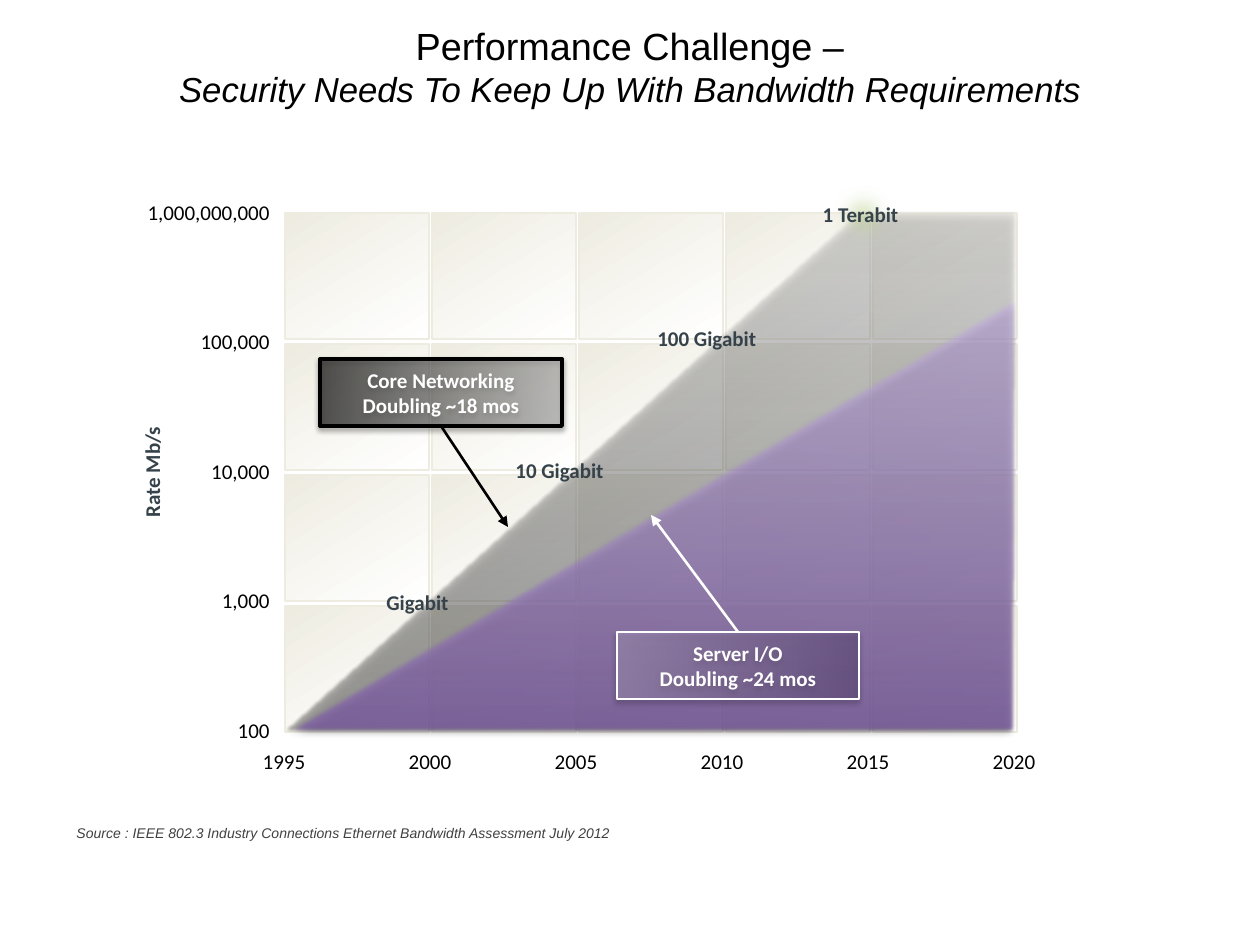
from lxml.etree import SubElement
from pptx import Presentation
from pptx.dml.color import RGBColor
from pptx.enum.shapes import MSO_CONNECTOR as Connector, MSO_SHAPE as Shape
from pptx.enum.text import MSO_ANCHOR as Anchor, PP_ALIGN as Align
from pptx.oxml.ns import qn
from pptx.util import Emu, Pt

SCALE = 914400 / 126
INK = "36424A"

TITLE = "Performance Challenge –\vSecurity Needs To Keep Up With Bandwidth Requirements"
TITLE_SIZES = (21.6, 19.8)
SOURCE = "Source : IEEE 802.3 Industry Connections Ethernet Bandwidth Assessment July 2012"
RATES = ["1,000,000,000", "100,000", "10,000", "1,000", "100"]
YEARS = ["1995", "2000", "2005", "2010", "2015", "2020"]
MILESTONES = [  # text, left, top, width
    ("100 Gigabit", 645, 319, 175),
    ("10 Gigabit", 503, 451, 158),
    ("Gigabit", 374, 583, 134),
]
# Gradient stops are (colour, opacity %)
AREAS = [
    ([(281, 732), (857, 212), (1016, 212), (1013, 733)], [("000000", 34), ("BDBDBD", 37)]),
    ([(281, 733), (1016, 297), (1014, 733)], [("7F5BAB", 70), ("C8B0ED", 51)]),
]
CALLOUTS = [  # text, left, top, stops, line colour, line width, arrow from, arrow to
    ("Server I/O\vDoubling ~24 mos", 617, 632, [("B3A2C7", 46), ("604A7B", 46)],
     "FFFFFF", 0.75, (738, 632), (651, 515)),
    ("Core Networking\vDoubling ~18 mos", 320, 359, [("000000", 60), ("999999", 46)],
     "000000", 2.25, (441, 426), (508, 527)),
]


def px(value):
    return Emu(round(value * SCALE))


def rgb(color):
    return RGBColor.from_string(color)


def format_text(frame, align, size, color, bold=False, italic=False, font="Calibri"):
    for para in frame.paragraphs:
        para.alignment = align
        for span in para.runs:
            span.font.name, span.font.size = font, Pt(size)
            span.font.bold, span.font.italic = bold, italic
            span.font.color.rgb = rgb(color)


def add_text(page, text, box, align=Align.LEFT, size=12, color=INK, **style):
    label = page.shapes.add_textbox(*map(px, box))
    label.text_frame.word_wrap = True
    label.text_frame.text = text
    format_text(label.text_frame, align, size, color, **style)
    return label


def fill_gradient(shape, stops, angle):
    """Blend two stops; the angle runs counter-clockwise."""
    shape.fill.gradient()
    shape.fill.gradient_angle = angle
    for stop, (color, _) in zip(shape.fill.gradient_stops, stops):
        stop.color.rgb = rgb(color)
    colors = shape._element.spPr.find(qn("a:gradFill")).iter(qn("a:srgbClr"))
    for element, (_, opacity) in zip(list(colors), stops):
        if opacity < 100:
            SubElement(element, qn("a:alpha"), val=str(opacity * 1000))


def add_effect(shape, name, **values):
    shape.shadow.inherit = False
    effects = shape._element.spPr.find(qn("a:effectLst"))
    return SubElement(effects, qn(name), **values)


def add_shadow(shape):
    shadow = add_effect(shape, "a:outerShdw", blurRad=str(Pt(3.1)), dist=str(Pt(1.8)),
                        dir="5400000", rotWithShape="0")
    color = SubElement(shadow, qn("a:srgbClr"), val="000000")
    SubElement(color, qn("a:alpha"), val="35000")


def add_tiles(page):
    for row in range(4):
        for column in range(5):
            box = (285 + 147 * column, 213 + 131 * row, 144, 126)
            tile = page.shapes.add_shape(Shape.RECTANGLE, *map(px, box))
            tile.shadow.inherit = False
            fill_gradient(tile, [("EEECE1", 100), ("FFFFFF", 100)], 301)
            tile.line.color.rgb = rgb("EEECE1")
            tile.line.width = Pt(0.75)


def add_area(page, points, stops):
    builder = page.shapes.build_freeform(*points[0], scale=SCALE)
    builder.add_line_segments(points[1:], close=True)
    area = builder.convert_to_shape()
    fill_gradient(area, stops, 90)
    area.line.fill.background()
    add_shadow(area)
    add_effect(area, "a:softEdge", rad=str(Pt(2)))


def add_callout(page, text, left, top, stops, color, width, start, end):
    box = page.shapes.add_shape(Shape.RECTANGLE, *map(px, (left, top, 242, 67)))
    fill_gradient(box, stops, 0)
    box.line.color.rgb = rgb(color)
    box.line.width = Pt(width)
    add_shadow(box)
    box.text_frame.text = text
    box.text_frame.vertical_anchor = Anchor.MIDDLE
    format_text(box.text_frame, Align.CENTER, 12, "FFFFFF", bold=True)

    arrow = page.shapes.add_connector(Connector.STRAIGHT, *map(px, start + end))
    arrow.line.color.rgb = rgb(color)
    arrow.line.width = Pt(1.5)
    SubElement(arrow.line._get_or_add_ln(), qn("a:tailEnd"), type="triangle")
    SubElement(arrow._element.spPr, qn("a:effectLst"))


def main():
    deck = Presentation()
    deck.slide_width, deck.slide_height = px(1260), px(945)
    page = deck.slides.add_slide(deck.slide_layouts[5])

    title = page.shapes.title
    title.left, title.top, title.width, title.height = map(px, (63, 27, 1134, 78))
    title.text_frame.text = TITLE
    title.text_frame.vertical_anchor = Anchor.MIDDLE
    format_text(title.text_frame, Align.CENTER, TITLE_SIZES[0], "000000", font="Arial")
    subtitle = title.text_frame.paragraphs[0].runs[1]
    subtitle.font.size, subtitle.font.italic = Pt(TITLE_SIZES[1]), True

    add_tiles(page)
    for points, stops in AREAS:
        add_area(page, points, stops)
    for i, rate in enumerate(RATES):
        add_text(page, rate, (63, 193 + 518 * i // 4, 219, 40), Align.RIGHT, color="000000")
    for i, year in enumerate(YEARS):
        add_text(page, year, (228 + 146 * i, 742, 112, 40), Align.CENTER, color="000000")
    for text, left, top, width in MILESTONES:
        add_text(page, text, (left, top, width, 40), bold=True)
    axis_title = add_text(page, "Rate Mb/s", (14, 452, 278, 40), Align.CENTER, bold=True)
    axis_title.rotation = 270
    for callout in CALLOUTS:
        add_callout(page, *callout)

    add_text(page, SOURCE, (64, 818, 799, 30), size=8, color="404040", italic=True, font="Arial")
    glow = page.shapes.add_shape(Shape.OVAL, *map(px, (823, 176, 79, 81)))
    glow.fill.solid()
    glow.fill.fore_color.rgb = rgb("C3D69B")
    glow.line.fill.background()
    add_effect(glow, "a:softEdge", rad=str(Pt(12)))
    add_text(page, "1 Terabit", (802, 195, 117, 38), Align.CENTER, bold=True)
    deck.save("out.pptx")


if __name__ == "__main__":
    main()
